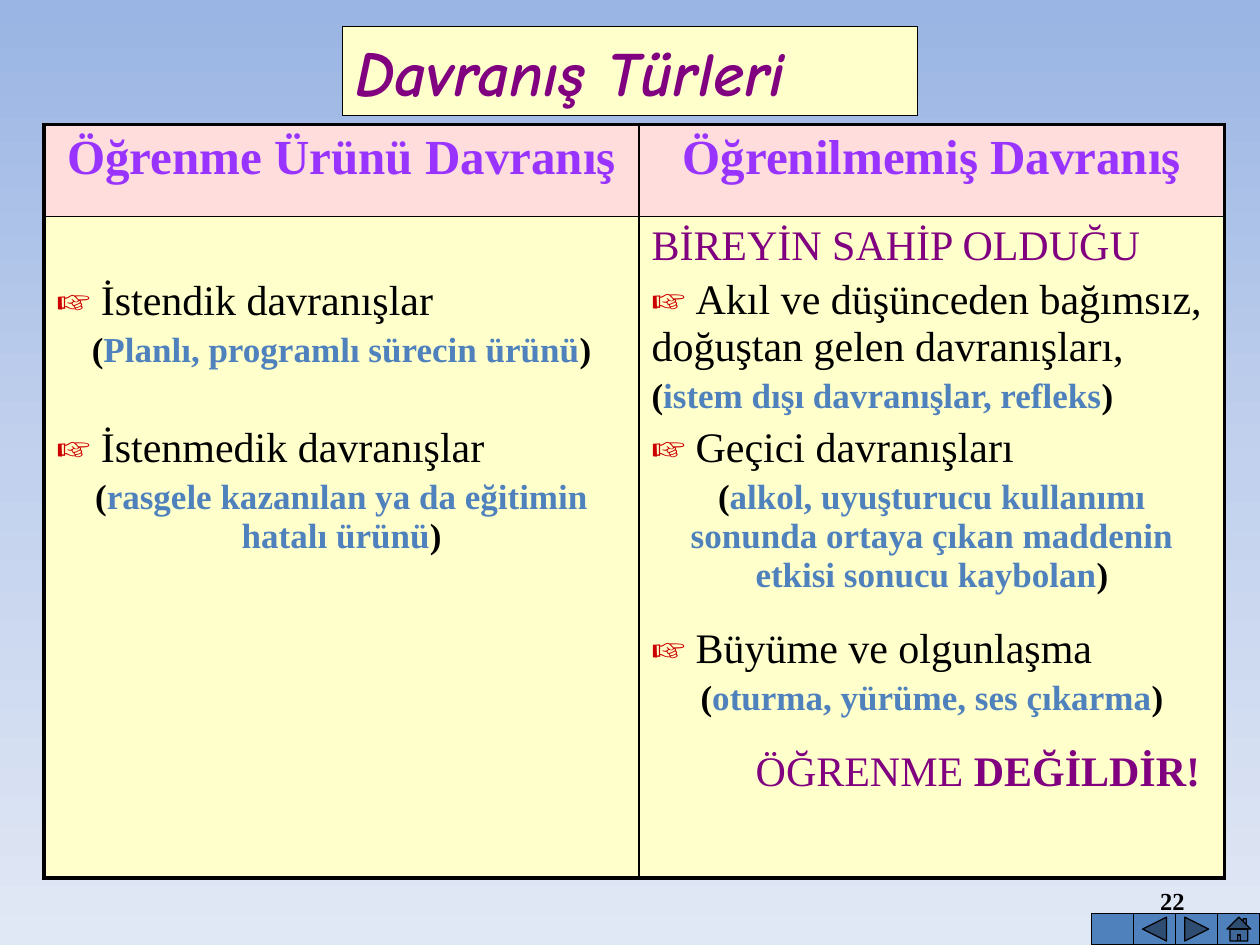
from copy import deepcopy
from pptx import Presentation, util as u
from pptx.dml.color import RGBColor
from pptx.enum import shapes, text
from pptx.oxml import parse_xml
from pptx.oxml.ns import nsdecls

Cm, Pt = u.Cm, u.Pt
AL, MS = text.PP_ALIGN, shapes.MSO_SHAPE

SERIF = "Times New Roman"
THEME = {
    "background": [(0, "9AB5E4"), (0.5, "C2D1ED"), (1, "E1E8F5")],
    "line": "000000", "button": "4F81BD", "header": "FFDDDD", "body": "FFFFCC",
    "thin": 0.75, "inner": 1, "outer": 2.25,
    "runs": {
        "title": dict(name="Comic Neue", size=36, bold=True, italic=True, color="800080"),
        "head": dict(name=SERIF, size=28, bold=True, color="9933FF"),
        "hand": dict(name=SERIF, size=24, bold=True, color="CC0000"),
        "item": dict(name=SERIF, size=24, bold=False, color="000000"),
        "paren": dict(name=SERIF, size=20, bold=True, color="000000"),
        "note": dict(name=SERIF, size=20, bold=True, color="4F81BD"),
        "caps": dict(name=SERIF, size=24, bold=False, color="800080"),
        "strong": dict(name=SERIF, size=24, bold=True, color="800080"),
        "number": dict(name=SERIF, size=14, bold=True, color="000000"),
    },
}


def item(label, before=4.8):
    return [("☞ ", "hand"), (label, "item")], dict(space_before=Pt(before))


def note(label, align=AL.CENTER):
    runs = [("(", "paren"), (label, "note"), (")", "paren")]
    return runs, dict(space_before=Pt(4), alignment=align)


TITLE = [([("Davranış Türleri", "title")], dict(alignment=AL.LEFT))]
NUMBER = [([("22", "number")], dict(alignment=AL.RIGHT))]
HEADS = [
    [([(label, "head")], dict(alignment=AL.CENTER))]
    for label in ("Öğrenme Ürünü Davranış", "Öğrenilmemiş Davranış")
]
LEARNED = [
    item("İstendik davranışlar", 0),
    note("Planlı, programlı sürecin ürünü"),
    item("İstenmedik davranışlar", 31.4),
    note("rasgele kazanılan ya da eğitimin hatalı ürünü"),
]
UNLEARNED = [
    ([("BİREYİN SAHİP OLDUĞU", "caps")], {}),
    item("Akıl ve düşünceden bağımsız, doğuştan gelen davranışları,"),
    note("istem dışı davranışlar, refleks", AL.LEFT),
    item("Geçici davranışları"),
    note("alkol, uyuşturucu kullanımı sonunda ortaya çıkan maddenin etkisi sonucu kaybolan"),
    item("Büyüme ve olgunlaşma", 17.9),
    note("oturma, yürüme, ses çıkarma"),
    ([("ÖĞRENME ", "caps"), ("DEĞİLDİR!", "strong")], dict(space_before=Pt(17.9))),
]
ROWS = [HEADS, [LEARNED, UNLEARNED]]
TOP_MARGINS = [[0.13, 0.13], [1.24, 0.13]]
LAST_INDENT = 2.1
COLS, HEIGHTS = [11.99, 11.81], [1.85, 13.34]
BUTTONS = [MS.ACTION_BUTTON_CUSTOM, MS.ACTION_BUTTON_BACK_OR_PREVIOUS,
           MS.ACTION_BUTTON_FORWARD_OR_NEXT, MS.ACTION_BUTTON_HOME]


def write(tf, paragraphs):
    for i, (runs, fmt) in enumerate(paragraphs):
        p = tf.paragraphs[0] if i == 0 else tf.add_paragraph()
        for key, value in fmt.items():
            if i or key != "space_before":
                setattr(p, key, value)
        for label, style in runs:
            r = p.add_run()
            r.text = label
            for key, value in THEME["runs"][style].items():
                if key == "color":
                    r.font.color.rgb = RGBColor.from_string(value)
                else:
                    setattr(r.font, key, Pt(value) if key == "size" else value)


def paint(sp, fill):
    sp.fill.solid()
    sp.fill.fore_color.rgb = RGBColor.from_string(fill)
    sp.line.color.rgb = RGBColor.from_string(THEME["line"])
    sp.line.width = Pt(THEME["thin"])


def place(sp, *box):
    for key, value in zip(("left", "top", "width", "height"), box):
        setattr(sp, key, Cm(value))


def add_background(s):
    fill = s.background.fill
    fill.gradient()
    fill.gradient_angle = 270
    stops = s._element.xpath(".//a:gsLst")[0]
    stops.insert(1, deepcopy(stops[0]))
    for stop, (position, color) in zip(fill.gradient_stops, THEME["background"]):
        stop.position = position
        stop.color.rgb = RGBColor.from_string(color)


def add_borders(cell, row, col):
    outer = {"L": col == 0, "R": col == len(COLS) - 1,
             "T": row == 0, "B": row == len(ROWS) - 1}
    tcPr = cell._tc.get_or_add_tcPr()
    for side, is_outer in outer.items():
        width = Pt(THEME["outer" if is_outer else "inner"])
        tcPr.append(parse_xml(
            f'<a:ln{side} {nsdecls("a")} w="{width}"><a:solidFill>'
            f'<a:srgbClr val="{THEME["line"]}"/></a:solidFill></a:ln{side}>'))


def add_behaviour_table(s):
    table = s.shapes.add_table(len(ROWS), len(COLS), Cm(0.89), Cm(2.51),
                               Cm(sum(COLS)), Cm(sum(HEIGHTS))).table
    table.horz_banding = False
    for col, width in zip(table.columns, COLS):
        col.width = Cm(width)
    for i, (row, height) in enumerate(zip(table.rows, HEIGHTS)):
        row.height = Cm(height)
        for j, cell in enumerate(row.cells):
            add_borders(cell, i, j)
            cell.fill.solid()
            cell.fill.fore_color.rgb = RGBColor.from_string(THEME["body" if i else "header"])
            cell.margin_top = Cm(TOP_MARGINS[i][j])
            write(cell.text_frame, ROWS[i][j])
    closing = table.cell(1, 1).text_frame.paragraphs[-1]
    closing._p.get_or_add_pPr().set("marL", str(Cm(LAST_INDENT)))


def main():
    prs = Presentation()
    prs.slide_width, prs.slide_height = Cm(25.4), Cm(19.05)
    s = prs.slides.add_slide(prs.slide_layouts[5])
    add_background(s)

    number = s.shapes.add_textbox(0, 0, 0, 0)
    place(number, 18.2, 17.65, 5.93, 1.02)
    number.text_frame.word_wrap = True
    number.text_frame.vertical_anchor = text.MSO_ANCHOR.MIDDLE
    write(number.text_frame, NUMBER)

    width, height = 0.85, 0.64
    left = 25.4 - len(BUTTONS) * width
    for i, kind in enumerate(BUTTONS):
        sp = s.shapes.add_shape(kind, 0, 0, 0, 0)
        place(sp, left + i * width, 19.05 - height, width, height)
        sp.shadow.inherit = False
        paint(sp, THEME["button"])

    title = s.shapes.title
    place(title, 6.91, 0.53, 11.58, 1.8)
    paint(title, THEME["body"])
    title.text_frame.auto_size = text.MSO_AUTO_SIZE.NONE
    title.text_frame.vertical_anchor = text.MSO_ANCHOR.MIDDLE
    write(title.text_frame, TITLE)

    add_behaviour_table(s)
    prs.save("out.pptx")


if __name__ == "__main__":
    main()
